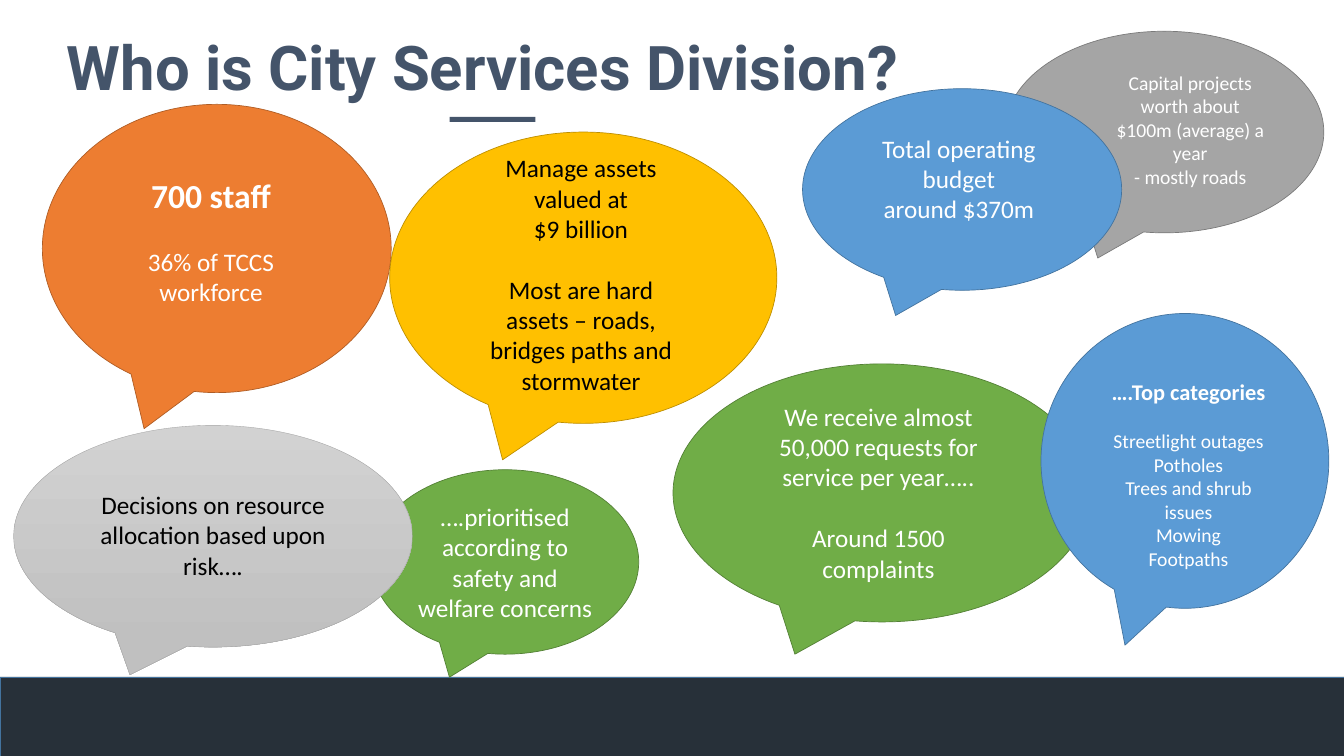
from pptx import Presentation
from pptx.dml.color import RGBColor
from pptx.enum.shapes import MSO_SHAPE
from pptx.enum.text import MSO_ANCHOR, PP_ALIGN
from pptx.util import Inches, Pt

COLOURS = {
    "white": "FFFFFF", "black": "000000", "slate": "44546A", "footer": "273039",
    "green": "70AD47", "green_edge": "538035", "orange": "ED7D31", "orange_edge": "AF5C24",
    "grey": "A5A5A5", "grey_edge": "7A7A7A", "yellow": "FFC000", "yellow_edge": "BD8E00",
    "blue": "5B9BD5", "blue_edge": "43739E", "silver_top": "D2D2D2", "silver_bottom": "C0C0C0",
}
FRAME = {"word_wrap": True, "margin_left": Inches(0.1), "margin_right": Inches(0.1),
         "margin_top": Inches(0.05), "margin_bottom": Inches(0.05)}

# Each line of speech is (wording, size, bold, space before in points).
BUBBLES = [
    {"at": (13.35, 7.22, 8.29, 5.12), "fill": "green", "edge": "green_edge",
     "speech_at": (14.87, 7.91, 5.11, 3.74), "ink": "white",
     "speech": [("We receive almost 50,000 requests for service per year…..", 36, False, 0),
                ("Around 1500 complaints", 36, False, 44)]},
    {"at": (0.84, 2.07, 6.92, 5.72), "fill": "orange", "edge": "orange_edge",
     "speech_at": (2.12, 3.42, 4.13, 3.33), "ink": "white",
     "speech": [("700 staff", 48, True, 0), ("36% of TCCS workforce", 36, False, 44)]},
    {"at": (19.93, 0.62, 6.33, 4), "fill": "grey", "edge": "grey_edge",
     "speech_at": (21.9, 1.35, 3.42, 2.46), "ink": "white",
     "speech": [(wording, 28, False, 0) for wording in (
         "Capital projects", "worth about", "$100m (average) a year", "- mostly roads")]},
    {"at": (7.73, 2.62, 7.68, 5.78), "fill": "yellow", "edge": "yellow_edge",
     "speech_at": (9.38, 2.98, 4.29, 6.16), "ink": "black",
     "speech": [("Manage assets valued at", 36, False, 0), ("$9 billion", 36, False, 0),
                ("Most are hard assets – roads, bridges paths and stormwater", 36, False, 44)]},
    {"at": (15.92, 1.76, 6.33, 4), "fill": "blue", "edge": "blue_edge",
     "speech_at": (16.67, 2.59, 4.7, 1.92), "ink": "white",
     "speech": [("Total operating budget", 36, False, 0), ("around $370m", 36, False, 0)]},
    {"at": (20.65, 6.22, 5.71, 5.85), "fill": "blue", "edge": "blue_edge",
     "speech_at": (21.93, 7.46, 3.29, 4.41), "ink": "white",
     "speech": [("….Top categories", 32, True, 0), ("Streetlight outages", 28, False, 34)]
     + [(wording, 28, False, 0) for wording in (
         "Potholes", "Trees and shrub issues", "Mowing", "Footpaths")]},
    {"at": (7.37, 9.32, 5.3, 3.66), "fill": "green", "edge": "green_edge",
     "speech_at": None, "ink": "white",
     "speech": [("….prioritised according to safety and welfare concerns", 36, False, 0)]},
    {"at": (0.27, 8.44, 7.91, 4.4), "fill": ("silver_top", "silver_bottom"), "edge": "grey",
     "edge_width": 0.5, "speech_at": (1.48, 9.66, 5.49, 1.92), "ink": "black",
     "speech": [("Decisions on resource allocation based upon risk….", 36, False, 0)]},
]


def colour(name):
    """Return the named colour."""
    return RGBColor.from_string(COLOURS[name])


def add_outline(slide, preset, at, fill, edge=None, edge_width=1):
    """Add a preset shape with a plain or two-tone vertical fill."""
    outline = slide.shapes.add_shape(preset, *map(Inches, at))
    outline.shadow.inherit = False
    if isinstance(fill, tuple):
        outline.fill.gradient()
        outline.fill.gradient_angle = 270
        for stop, tone in zip(outline.fill.gradient_stops, fill):
            stop.color.rgb = colour(tone)
    else:
        outline.fill.solid()
        outline.fill.fore_color.rgb = colour(fill)
    if edge:
        outline.line.color.rgb = colour(edge)
        outline.line.width = Pt(edge_width)
    else:
        outline.line.fill.background()
    return outline


def write_lines(frame, lines, ink, typeface="Calibri"):
    """Fill a text frame with centred lines."""
    for attribute, value in FRAME.items():
        setattr(frame, attribute, value)
    for index, (wording, size, bold, gap) in enumerate(lines):
        line = frame.add_paragraph() if index else frame.paragraphs[0]
        line.text = wording
        line.alignment = PP_ALIGN.CENTER
        if gap:
            line.space_before = Pt(gap)
        for attribute, value in {"name": typeface, "size": Pt(size), "bold": bold}.items():
            setattr(line.runs[0].font, attribute, value)
        line.runs[0].font.color.rgb = colour(ink)


def add_words(slide, at, lines, ink, typeface="Calibri"):
    """Add a text box holding centred lines."""
    words = slide.shapes.add_textbox(*map(Inches, at))
    write_lines(words.text_frame, lines, ink, typeface)


def add_bubble(slide, bubble):
    """Add a speech bubble with its wording."""
    callout = add_outline(slide, MSO_SHAPE.OVAL_CALLOUT, bubble["at"], bubble["fill"],
                          bubble["edge"], bubble.get("edge_width", 1))
    if bubble["speech_at"]:
        add_words(slide, bubble["speech_at"], bubble["speech"], bubble["ink"])
    else:
        callout.text_frame.vertical_anchor = MSO_ANCHOR.MIDDLE
        write_lines(callout.text_frame, bubble["speech"], bubble["ink"])


def main():
    """Build the City Services Division slide."""
    deck = Presentation()
    deck.slide_width, deck.slide_height = Inches(26.66), Inches(15)
    slide = deck.slides.add_slide(deck.slide_layouts[6])
    add_outline(slide, MSO_SHAPE.RECTANGLE, (0, 13.43, 26.66, 1.57), "footer", "blue_edge")
    add_words(slide, (-1.88, 0.53, 22.9, 1.58),
              [("Who is City Services Division?", 88, True, 0)], "slate", "Roboto")
    add_outline(slide, MSO_SHAPE.RECTANGLE, (8.92, 2.32, 1.7, 0.1), "slate")
    for bubble in BUBBLES:
        add_bubble(slide, bubble)
    deck.save("out.pptx")


if __name__ == "__main__":
    main()
